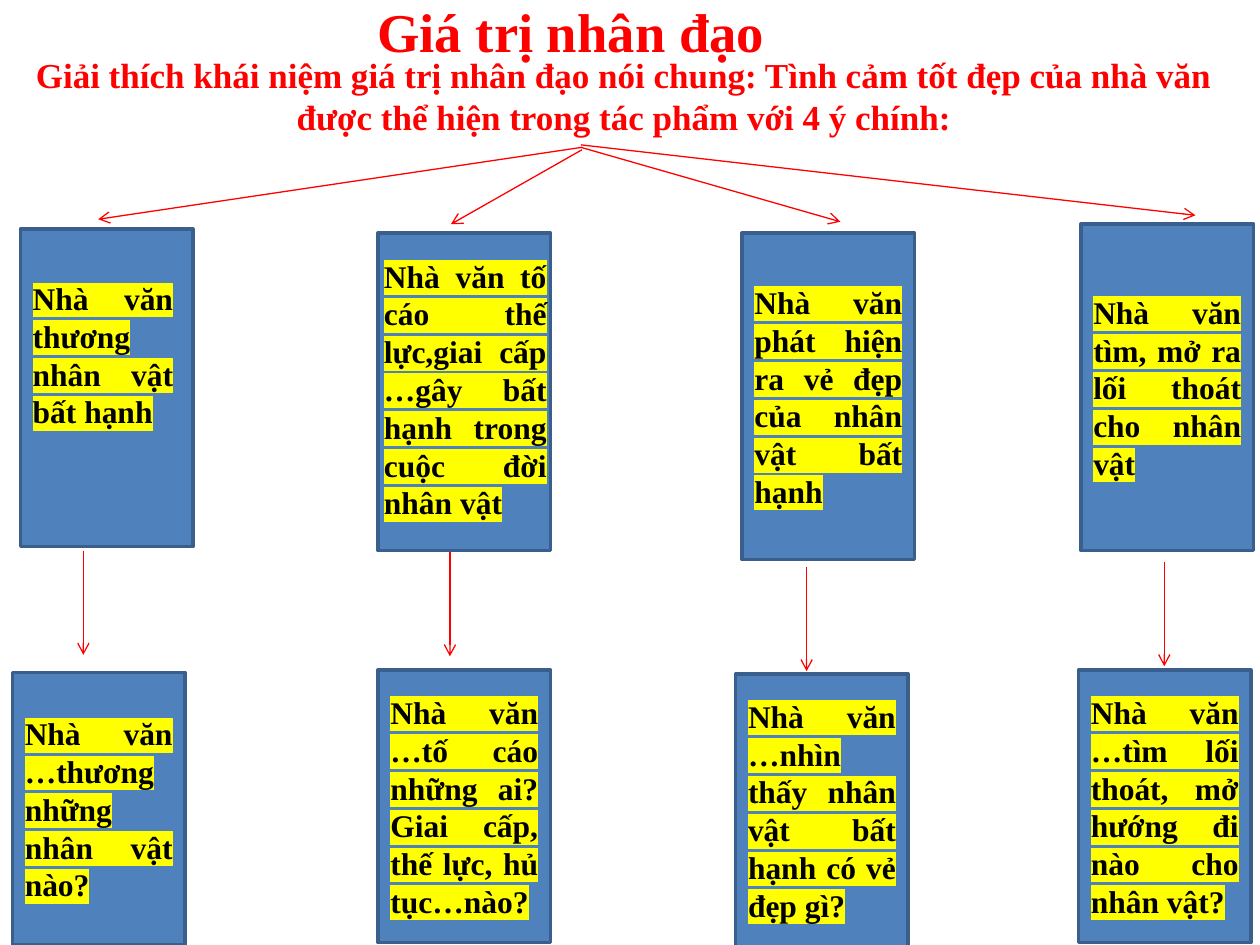
from lxml import etree
from pptx import Presentation
from pptx.dml.color import RGBColor
from pptx.enum.shapes import MSO_CONNECTOR, MSO_SHAPE
from pptx.enum.text import MSO_ANCHOR, MSO_AUTO_SIZE, PP_ALIGN
from pptx.oxml.ns import qn
from pptx.util import Cm, Pt

RECT = MSO_SHAPE.RECTANGLE
LINE = MSO_CONNECTOR.STRAIGHT
MIDDLE = MSO_ANCHOR.MIDDLE
FIXED = MSO_AUTO_SIZE.NONE
CENTER, JUSTIFY = PP_ALIGN.CENTER, PP_ALIGN.JUSTIFY


def color(code):
    return RGBColor.from_string(code)


class Board:
    font = "Times New Roman"
    red, black, yellow = "FF0000", "000000", "FFFF00"
    blue, edge = "4F81BD", "3A5F8C"
    wide = 3.48

    def __init__(self, slide):
        self.slide = slide
        self.shapes = slide.shapes

    def letter(self, shape, text, size, ink, align, mark=None):
        frame = shape.text_frame
        frame.word_wrap = True
        frame.auto_size = FIXED
        frame.vertical_anchor = MIDDLE
        para = frame.paragraphs[0]
        para.alignment = align
        run = para.add_run()
        run.text = text
        font = run.font
        font.size, font.bold = Pt(size), True
        font.color.rgb = color(ink)
        font.name = self.font
        if mark:
            fill = run._r.rPr.find(qn("a:solidFill"))
            light = etree.Element(qn("a:highlight"))
            etree.SubElement(light, qn("a:srgbClr")).set("val", mark)
            fill.addnext(light)

    def title(self, text, x, y, w, h):
        head = self.shapes.title
        head.left, head.top, head.width, head.height = map(Cm, (x, y, w, h))
        self.letter(head, text, 31.2, self.red, CENTER)

    def lead(self, text, x, y, w, h):
        area = self.shapes.add_textbox(*map(Cm, (x, y, w, h)))
        self.letter(area, text, 20, self.red, CENTER)

    def note(self, shape, text):
        self.letter(shape, text, 18, self.black, JUSTIFY, self.yellow)

    def label(self, text, x, y, w, h):
        self.note(self.shapes.add_textbox(*map(Cm, (x, y, w, h))), text)

    def box(self, x, y, h, text=None):
        card = self.shapes.add_shape(RECT, *map(Cm, (x, y, self.wide, h)))
        card.shadow.inherit = False
        card.fill.solid()
        card.fill.fore_color.rgb = color(self.blue)
        card.line.color.rgb = color(self.edge)
        card.line.width = Pt(2)
        if text:
            self.note(card, text)

    def arrow(self, x1, y1, x2, y2):
        line = self.shapes.add_connector(LINE, *map(Cm, (x1, y1, x2, y2)))
        line.line.color.rgb = color(self.red)
        line.line.width = Pt(0.75)
        props = line._element.spPr
        etree.SubElement(props.find(qn("a:ln")), qn("a:tailEnd")).set("type", "arrow")
        etree.SubElement(props, qn("a:effectLst"))


def main():
    deck = Presentation()
    deck.slide_width, deck.slide_height = Cm(25.4), Cm(19.05)
    board = Board(deck.slides.add_slide(deck.slide_layouts[5]))

    board.title("Giá trị nhân đạo", 3.91, -0.28, 15.19, 1.8)
    board.lead("Giải thích khái niệm giá trị nhân đạo nói chung: Tình cảm tốt đẹp "
               "của nhà văn được thể hiện trong tác phẩm với 4 ý chính:",
               -0.08, 1.07, 25.32, 1.7)

    ideas = [
        (0.41, 4.62, 6.4),
        (7.62, 4.7, 6.4),
        (14.96, 4.7, 6.58, "Nhà văn phát hiện ra vẻ đẹp của nhân vật bất hạnh"),
        (21.79, 4.52, 6.58, "Nhà văn tìm, mở ra lối thoát cho nhân vật"),
    ]
    for idea in ideas:
        board.box(*idea)
    board.label("Nhà văn thương nhân vật bất hạnh", 0.41, 5.23, 3.33, 3.84)
    board.label("Nhà văn tố cáo thế lực,giai cấp …gây bất hạnh trong cuộc đời "
                "nhân vật", 7.49, 4.83, 3.78, 6.02)

    asks = [
        (0.25, 13.56, "Nhà văn …thương những nhân vật nào?"),
        (7.62, 13.51, "Nhà văn …tố cáo những ai? Giai cấp, thế lực, hủ tục…nào?"),
        (14.83, 13.59, "Nhà văn …nhìn thấy nhân vật bất hạnh có vẻ đẹp gì?"),
        (21.74, 13.51, "Nhà văn …tìm lối thoát, mở hướng đi nào cho nhân vật?"),
    ]
    for x, y, text in asks:
        board.box(x, y, 5.49, text)

    fan = [
        (11.73, 2.97, 1.98, 4.42),
        (11.73, 3.02, 9.09, 4.52),
        (11.71, 2.97, 16.94, 4.47),
        (11.71, 2.92, 24.1, 4.34),
    ]
    for ends in fan:
        board.arrow(*ends)

    drop = 2.1
    for x, y in [(1.68, 11.1), (9.07, 11.13), (16.26, 11.43), (23.47, 11.33)]:
        board.arrow(x, y, x, y + drop)

    deck.save("out.pptx")


if __name__ == "__main__":
    main()
